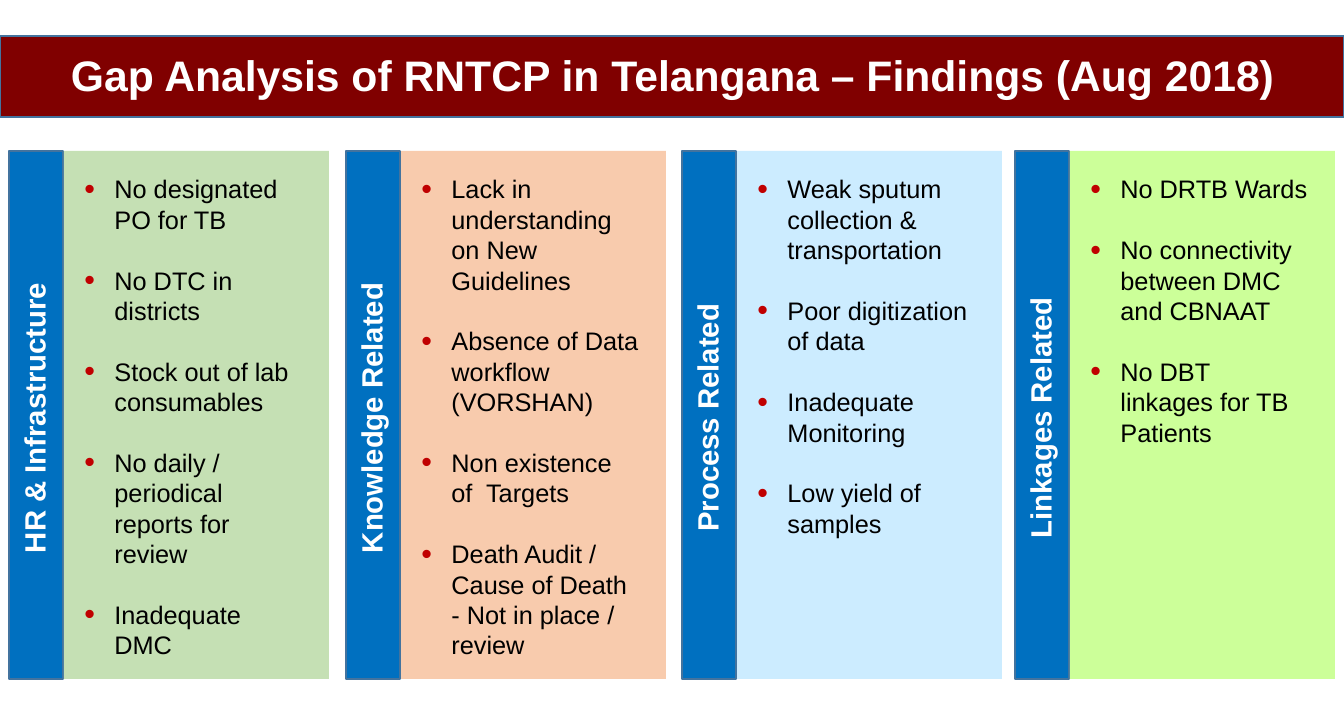
import dataclasses

import lxml.etree
import pptx
import pptx.dml.color
import pptx.enum.shapes
import pptx.enum.text
import pptx.oxml.ns
import pptx.util

PX = 9525  # EMU per px
SHAPE = pptx.enum.shapes.MSO_SHAPE
ALIGN = pptx.enum.text.PP_ALIGN
ANCHOR = pptx.enum.text.MSO_ANCHOR


@dataclasses.dataclass(frozen=True)
class Theme:
    font: str = "Arial"
    banner: str = "800000"
    band: str = "0070C0"
    outline: str = "43739E"
    light: str = "FFFFFF"
    dark: str = "000000"
    bullet: str = "C00000"
    title_size: int = 32
    label_size: int = 22
    body_size: int = 19
    body_line: float = 22.8


THEME = Theme()

# left, panel colour, heading, heading length, findings
COLUMNS = [
    (9, "C5E0B4", "HR & Infrastructure", 293, [
        "No designated PO for TB",
        "No DTC in districts",
        "Stock out of lab consumables",
        "No daily / periodical reports for review",
        "Inadequate DMC",
    ]),
    (346, "F8CBAD", "Knowledge Related", 293, [
        "Lack in understanding on New Guidelines",
        "Absence of Data workflow (VORSHAN)",
        "Non existence of  Targets",
        "Death Audit /  Cause of Death - Not in place / review",
    ]),
    (682, "CCECFF", "Process Related", 251, [
        "Weak sputum collection & transportation",
        "Poor digitization of data",
        "Inadequate Monitoring",
        "Low yield of samples",
    ]),
    (1015, "CCFF99", "Linkages Related", 264, [
        "No DRTB Wards",
        "No connectivity between DMC and CBNAAT",
        "No DBT linkages for TB Patients",
    ]),
]


def px(*lengths):
    return [pptx.util.Emu(round(n * PX)) for n in lengths]


def rgb(value):
    return pptx.dml.color.RGBColor.from_string(value)


def add_box(s, x, y, w, h, fill=None, line=None, kind=SHAPE.RECTANGLE):
    sp = s.shapes.add_shape(kind, *px(x, y, w, h))
    sp.shadow.inherit = False
    if fill:
        sp.fill.solid()
        sp.fill.fore_color.rgb = rgb(fill)
    else:
        sp.fill.background()
    if line:
        sp.line.color.rgb = rgb(line)
        sp.line.width = pptx.util.Pt(1)
    else:
        sp.line.fill.background()
    return sp


def write(p, text, size, color, bold=False, align=ALIGN.LEFT):
    p.alignment = align
    r = p.add_run()
    r.text = text
    r.font.name = THEME.font
    r.font.size = pptx.util.Pt(size)
    r.font.bold = bold
    r.font.color.rgb = rgb(color)


def add_bullet(p, indent):
    pPr = p._p.get_or_add_pPr()
    pPr.set("marL", str(indent * PX))
    pPr.set("indent", str(-indent * PX))

    def child(parent, tag, **attrs):
        return lxml.etree.SubElement(parent, pptx.oxml.ns.qn(tag), **attrs)

    child(child(pPr, "a:buClr"), "a:srgbClr", val=THEME.bullet)
    child(pPr, "a:buSzPct", val="120000")
    child(pPr, "a:buFont", typeface=THEME.font)
    child(pPr, "a:buChar", char="•")


def build_banner(s, x, y, w, h, text):
    add_box(s, x, y, w, h, THEME.banner, THEME.outline)
    title = s.shapes.title
    title.left, title.top, title.width, title.height = px(x + 26, y + 8, w - 49, h - 20)
    s.shapes._spTree.append(title._element)  # in front of the banner
    tf = title.text_frame
    tf.auto_size = pptx.enum.text.MSO_AUTO_SIZE.NONE
    tf.vertical_anchor = ANCHOR.TOP
    write(tf.paragraphs[0], text, THEME.title_size, THEME.light, True, ALIGN.CENTER)


def build_column(s, x, y, w, h, color, heading, length, findings):
    band_w, label_h = 54, 45

    # Band with its upright heading
    add_box(s, x, y, band_w, h, THEME.band, THEME.outline)
    mid_x, mid_y = x + band_w / 2 - 2, y + h / 2 + 5
    label = s.shapes.add_textbox(
        *px(mid_x - length / 2, mid_y - label_h / 2, length, label_h))
    label.rotation = 270
    label.text_frame.word_wrap = False
    write(label.text_frame.paragraphs[0], heading, THEME.label_size, THEME.light,
          True, ALIGN.RIGHT)

    # Panel with its findings
    add_box(s, x + band_w + 1, y, w - band_w - 1, h, color)
    body = add_box(s, x + 66, y + 18, w - 83, h - 52, kind=SHAPE.ROUNDED_RECTANGLE)
    body.adjustments[0] = 0
    tf = body.text_frame
    tf.word_wrap = True
    tf.vertical_anchor = ANCHOR.TOP
    for i, finding in enumerate(findings):
        p = tf.add_paragraph() if i else tf.paragraphs[0]
        write(p, finding, THEME.body_size, THEME.dark)
        p.line_spacing = pptx.util.Pt(THEME.body_line)
        p.space_before = pptx.util.Pt(THEME.body_line if i else 0)
        add_bullet(p, 30)


def main():
    prs = pptx.Presentation()
    prs.slide_width, prs.slide_height = px(1344, 720)
    s = prs.slides.add_slide(prs.slide_layouts[5])
    build_banner(s, 0, 36, 1344, 81,
                 "Gap Analysis of RNTCP in Telangana – Findings (Aug 2018)")
    for x, *content in COLUMNS:
        build_column(s, x, 151, 320, 528, *content)
    prs.save("out.pptx")


if __name__ == "__main__":
    main()
